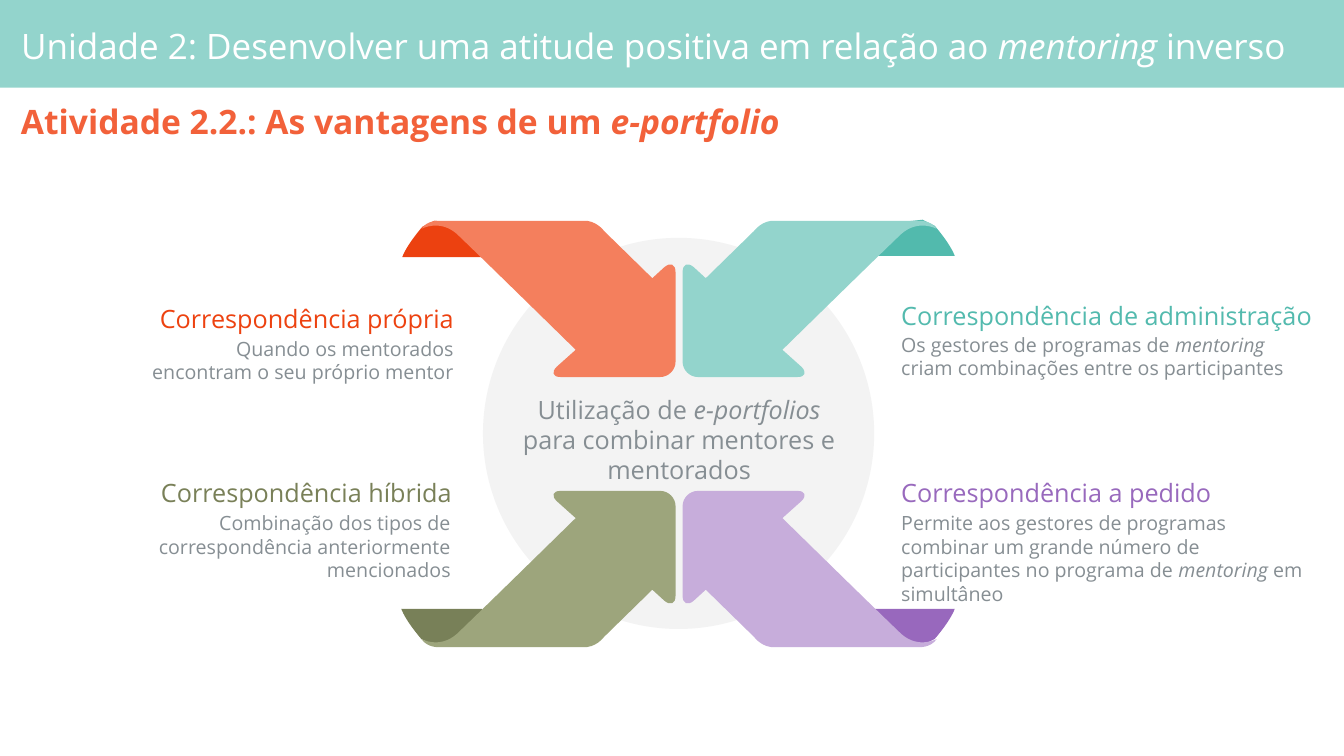
"""Build the slide on four ways of matching mentors and mentees with e-portfolios."""
import pptx
import pptx.dml.color
import pptx.enum.shapes
import pptx.enum.text
import pptx.oxml
import pptx.oxml.ns
import pptx.util

Inches = pptx.util.Inches
qn = pptx.oxml.ns.qn
ALIGN = pptx.enum.text.PP_ALIGN
ANCHOR = pptx.enum.text.MSO_ANCHOR
FIT = pptx.enum.text.MSO_AUTO_SIZE
PRESET = pptx.enum.shapes.MSO_SHAPE

FONT = "Open Sans"
COLORS = {
    "banner": "93D4CC", "white": "FFFFFF", "activity": "F2613A",
    "body": "868E93", "disc": "7F7F7F",
    "own": "F47F5D", "own tail": "EC4110", "own head": "ED4210",
    "admin": "93D4CC", "admin tail": "52BAAD", "admin head": "53BAAE",
    "hybrid": "9DA57C", "hybrid tail": "788058", "hybrid head": "798058",
    "request": "C7ADDB", "request tail": "9868BD", "request head": "9869BD",
}

UNIT = [("Unidade 2: Desenvolver uma atitude positiva em relação ao ", False),
        ("mentoring", True), (" inverso", False)]
ACTIVITY = [("Atividade 2.2.: As vantagens de um ", False), ("e-portfolio", True)]
CENTER = [("Utilização de", False), (" e-portfolios ", True),
          ("para combinar mentores e mentorados", False)]

MATCHES = [
    {"key": "own", "right": False, "bottom": False, "tail_shift": 0.01,
     "head": "Correspondência própria", "head_at": (1.15, 2.96, 3.45, 0.4),
     "body": [("Quando os mentorados encontram o seu próprio mentor", False)],
     "body_at": (1.36, 3.29, 3.24, 0.57)},
    {"key": "admin", "right": True, "bottom": False, "tail_shift": 0,
     "head": "Correspondência de administração", "head_at": (8.84, 2.93, 4.49, 0.4),
     "body": [("Os gestores de programas de ", False), ("mentoring", True),
              (" criam combinações entre os participantes", False)],
     "body_at": (8.84, 3.25, 4.2, 0.57)},
    {"key": "hybrid", "right": False, "bottom": True, "tail_shift": 0,
     "head": "Correspondência híbrida", "head_at": (1.15, 4.69, 3.43, 0.4),
     "body": [("Combinação dos tipos de correspondência anteriormente mencionados", False)],
     "body_at": (1.33, 5.02, 3.24, 0.81)},
    {"key": "request", "right": True, "bottom": True, "tail_shift": 0,
     "head": "Correspondência a pedido", "head_at": (8.84, 4.69, 4.04, 0.4),
     "body": [("Permite aos gestores de programas combinar um grande número de "
               "participantes no programa de ", False),
              ("mentoring", True), (" em simultâneo", False)],
     "body_at": (8.84, 5.02, 4.2, 0.81)},
]

TAIL = [(3.98, 2.54), (4.78, 2.54), (4.76, 2.31), (4.57, 2.21), (4.3, 2.18),
        (4.18, 2.24), (4.18, 2.24, 4.03, 2.41, 3.98, 2.54)]
ARROW = [(6.59, 2.65), (6.47, 2.76), (5.99, 2.29),
         (5.99, 2.29, 5.91, 2.18, 5.78, 2.19),
         (5.65, 2.19, 4.36, 2.19, 4.36, 2.19),
         (4.36, 2.19, 4.24, 2.18, 4.18, 2.27),
         (4.18, 2.27, 4.36, 2.17, 4.53, 2.32),
         (4.7, 2.48, 5.71, 3.47, 5.71, 3.47), (5.52, 3.64),
         (5.47, 3.69, 5.48, 3.74, 5.56, 3.74), (6.55, 3.74),
         (6.63, 3.74, 6.7, 3.67, 6.7, 3.59), (6.7, 2.7),
         (6.7, 2.62, 6.65, 2.6, 6.59, 2.65)]
TAIL_MIRROR = (13.45, 8.58)
ARROW_MIRROR = (13.47, 8.61)


def rgb(name):
    """Return the named colour."""
    return pptx.dml.color.RGBColor.from_string(COLORS[name])


def paint(shape, color):
    """Give a shape a flat fill with no line or shadow."""
    shape.shadow.inherit = False
    shape.fill.solid()
    shape.fill.fore_color.rgb = rgb(color)
    shape.line.fill.background()


def add_outline(shapes, outline, mirror, match, color, shift=0):
    """Draw an outline of lines and Bézier curves, mirrored into its quadrant."""
    def place(x, y):
        return (Inches((mirror[0] - x if match["right"] else x) + shift),
                Inches((mirror[1] - y if match["bottom"] else y) + shift))

    ends = [place(*segment[-2:]) for segment in outline]
    builder = shapes.build_freeform(*ends[0])
    builder.add_line_segments(ends[1:], close=True)
    shape = builder.convert_to_shape()
    paint(shape, color)
    for segment, line in zip(outline[1:], list(shape.element.iter(qn("a:lnTo")))):
        if len(segment) == 6:
            curve = pptx.oxml.parse_xml("<a:cubicBezTo %s/>" % pptx.oxml.ns.nsdecls("a"))
            for i in (0, 2, 4):
                x, y = place(*segment[i:i + 2])
                point = curve.makeelement(qn("a:pt"), {"x": str(x - shape.left),
                                                       "y": str(y - shape.top)})
                curve.append(point)
            line.getparent().replace(line, curve)


def write(shape, runs, size, color, align, bold=False, spacing=None,
          anchor=ANCHOR.TOP, insets=(0.1, 0.05, 0.1, 0.05), fit=FIT.SHAPE_TO_FIT_TEXT):
    """Fill a shape with one paragraph of plain and italic runs."""
    frame = shape.text_frame
    frame.word_wrap = True
    frame.auto_size = fit
    frame.vertical_anchor = anchor
    (frame.margin_left, frame.margin_top,
     frame.margin_right, frame.margin_bottom) = map(Inches, insets)
    paragraph = frame.paragraphs[0]
    paragraph.alignment = align
    paragraph.line_spacing = spacing
    for text, italic in runs:
        run = paragraph.add_run()
        run.text = text
        run.font.name = FONT
        run.font.size = pptx.util.Pt(size)
        run.font.bold = bold
        run.font.italic = italic
        run.font.color.rgb = rgb(color)


def add_text(shapes, box, *args, **options):
    """Add a text box and write in it."""
    write(shapes.add_textbox(*map(Inches, box)), *args, **options)


def main():
    """Compose and save the slide."""
    deck = pptx.Presentation()
    deck.slide_width, deck.slide_height = Inches(13.33), Inches(7.5)
    layout = deck.slide_layouts[5]
    slide = deck.slides.add_slide(layout)
    shapes = slide.shapes

    banner = shapes.add_shape(PRESET.RECTANGLE, 0, 0, deck.slide_width, Inches(0.87))
    paint(banner, "banner")
    layout.shapes[0].element.addprevious(banner.element)

    title = shapes.title
    title.left, title.top, title.width, title.height = map(Inches, (0.11, 0.09, 13.06, 0.78))
    write(title, UNIT, 25, "white", ALIGN.LEFT, spacing=0.9,
          anchor=ANCHOR.MIDDLE, insets=(0.1, 0.06, 0.06, 0.06), fit=FIT.NONE)
    add_text(shapes, (0.11, 0.93, 13.06, 0.6), ACTIVITY, 24, "activity", ALIGN.JUSTIFY,
             bold=True, spacing=0.9, anchor=ANCHOR.MIDDLE, fit=FIT.NONE)

    disc = shapes.add_shape(PRESET.OVAL, *map(Inches, (4.79, 2.36, 3.88, 3.88)))
    paint(disc, "disc")
    disc_color = disc.element.spPr.find(".//" + qn("a:srgbClr"))
    disc_color.append(pptx.oxml.parse_xml(
        '<a:alpha %s val="9000"/>' % pptx.oxml.ns.nsdecls("a")))

    for match in MATCHES:
        add_outline(shapes, TAIL, TAIL_MIRROR, match, match["key"] + " tail",
                    match["tail_shift"])
    for match in MATCHES:
        add_outline(shapes, ARROW, ARROW_MIRROR, match, match["key"])
    add_text(shapes, (5.04, 3.86, 3.39, 1.01), CENTER, 18, "body", ALIGN.CENTER)
    for match in MATCHES:
        align = ALIGN.LEFT if match["right"] else ALIGN.RIGHT
        pair = shapes.add_group_shape().shapes
        add_text(pair, match["body_at"], match["body"], 14, "body", align)
        add_text(pair, match["head_at"], [(match["head"], False)], 18,
                 match["key"] + " head", align)
    deck.save("out.pptx")


if __name__ == "__main__":
    main()
